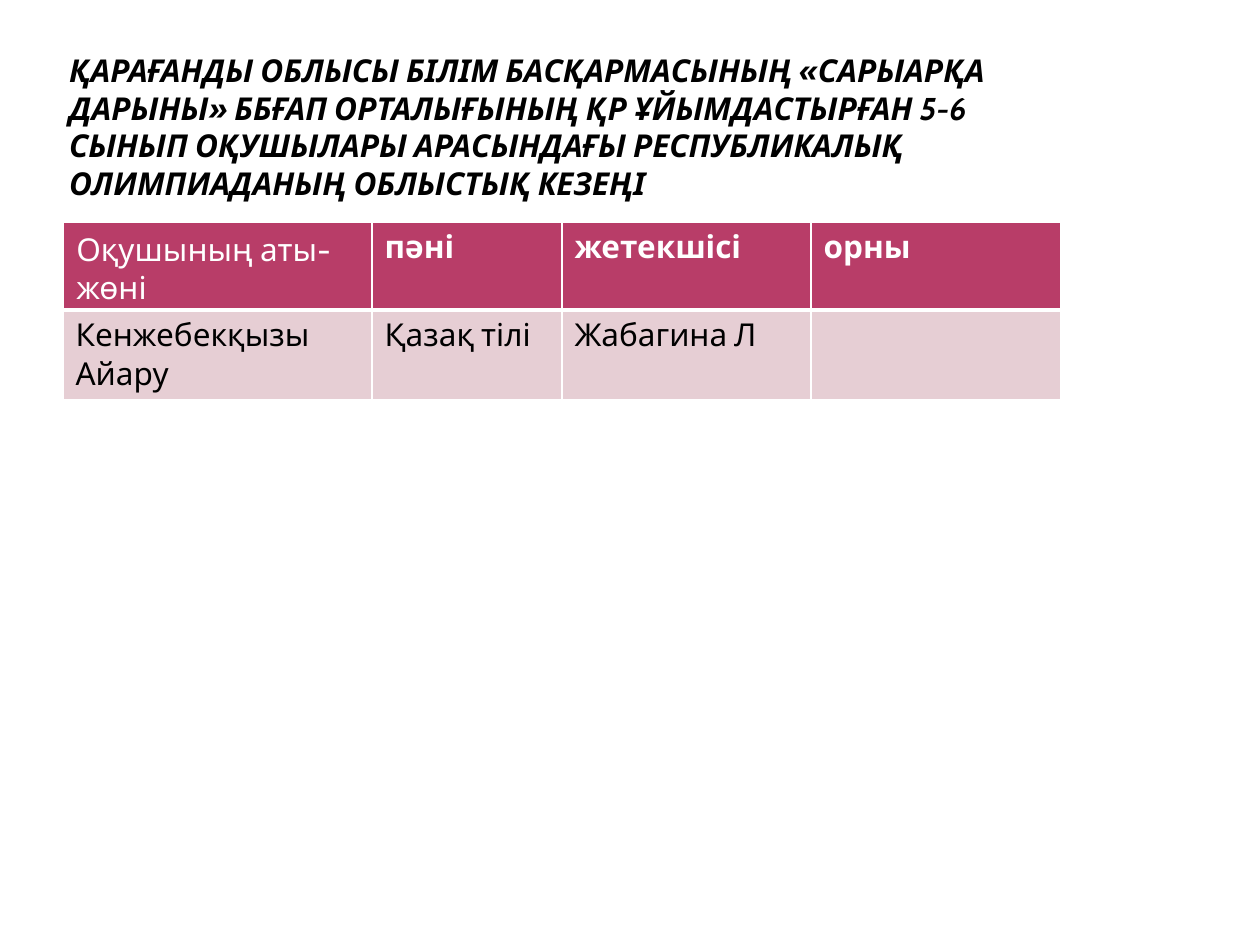
from lxml import etree
from pptx import Presentation
from pptx.dml.color import RGBColor
from pptx.enum.text import MSO_ANCHOR, MSO_AUTO_SIZE, PP_ALIGN
from pptx.oxml.ns import qn
from pptx.util import Emu, Pt

BOTTOM = MSO_ANCHOR.BOTTOM
NO_AUTOFIT = MSO_AUTO_SIZE.NONE
GROW = MSO_AUTO_SIZE.SHAPE_TO_FIT_TEXT
LEFT = PP_ALIGN.LEFT

PX_PER_INCH = 126
FONT = "Cabin"
BLACK, WHITE = "000000", "FFFFFF"
HEADER_FILL, BODY_FILL = "B83D68", "E6CED4"

TITLE = (
    "ҚАРАҒАНДЫ ОБЛЫСЫ БІЛІМ БАСҚАРМАСЫНЫҢ «САРЫАРҚА ДАРЫНЫ» ББҒАП "
    "ОРТАЛЫҒЫНЫҢ ҚР ҰЙЫМДАСТЫРҒАН 5-6 СЫНЫП ОҚУШЫЛАРЫ АРАСЫНДАҒЫ "
    "РЕСПУБЛИКАЛЫҚ ОЛИМПИАДАНЫҢ ОБЛЫСТЫҚ КЕЗЕҢІ"
)
NAME_LABEL = "Оқушының аты-жөні"
ROWS = [
    ["", "пәні", "жетекшісі", "орны"],
    ["Кенжебекқызы Айару", "Қазақ тілі", "Жабагина Л", ""],
]
COLUMN_WIDTHS = [309, 190, 249, 250]
ROW_HEIGHT = 88


def px(length):
    return Emu(round(length * 914400 / PX_PER_INCH))


def color(hex_string):
    return RGBColor.from_string(hex_string)


def write_text(text_frame, text, hex_color, bold=False, italic=False):
    paragraph = text_frame.paragraphs[0]
    paragraph.alignment = LEFT
    target = paragraph
    if text:
        target = paragraph.add_run()
        target.text = text
    values = {"name": FONT, "size": Pt(18), "bold": bold, "italic": italic}
    for attribute, value in values.items():
        setattr(target.font, attribute, value)
    target.font.color.rgb = color(hex_color)


def format_frame(text_frame, values):
    for attribute, value in values.items():
        setattr(text_frame, attribute, value)


def add_borders(cell, bottom_width):
    properties = cell._tc.get_or_add_tcPr()
    widths = {"a:lnL": 1, "a:lnR": 1, "a:lnT": 1, "a:lnB": bottom_width}
    for tag, width in widths.items():
        line = etree.SubElement(properties, qn(tag), w=str(Pt(width)))
        fill = etree.SubElement(line, qn("a:solidFill"))
        etree.SubElement(fill, qn("a:srgbClr"), val=WHITE)


def add_title(slide, left, top, width, height):
    title = slide.shapes.title
    title.left, title.top = px(left), px(top)
    title.width, title.height = px(width), px(height)
    format_frame(title.text_frame, {
        "word_wrap": True, "auto_size": NO_AUTOFIT, "vertical_anchor": BOTTOM,
        "margin_left": px(6), "margin_right": px(6),
        "margin_top": 0, "margin_bottom": 0,
    })
    write_text(title.text_frame, TITLE, BLACK, bold=True, italic=True)


def add_results_table(slide, left, top):
    shape = slide.shapes.add_table(
        len(ROWS), len(COLUMN_WIDTHS), px(left), px(top),
        px(sum(COLUMN_WIDTHS)), px(ROW_HEIGHT * len(ROWS)),
    )
    table = shape.table
    for column, width in zip(table.columns, COLUMN_WIDTHS):
        column.width = px(width)
    for row_index, texts in enumerate(ROWS):
        header = row_index == 0
        table.rows[row_index].height = px(ROW_HEIGHT)
        for column_index, text in enumerate(texts):
            cell = table.cell(row_index, column_index)
            add_borders(cell, 3 if header else 1)
            cell.fill.solid()
            cell.fill.fore_color.rgb = color(HEADER_FILL if header else BODY_FILL)
            write_text(cell.text_frame, text, WHITE if header else BLACK, bold=header)

    label = slide.shapes.add_textbox(px(left + 1), px(top + 2), px(328), px(50))
    format_frame(label.text_frame, {"word_wrap": True, "auto_size": GROW})
    write_text(label.text_frame, NAME_LABEL, WHITE)


def main():
    presentation = Presentation()
    presentation.slide_width, presentation.slide_height = px(1260), px(945)
    slide = presentation.slides.add_slide(presentation.slide_layouts[5])
    add_title(slide, 63, 44, 998, 158)
    add_results_table(slide, 63, 222)
    presentation.save("out.pptx")


if __name__ == "__main__":
    main()
